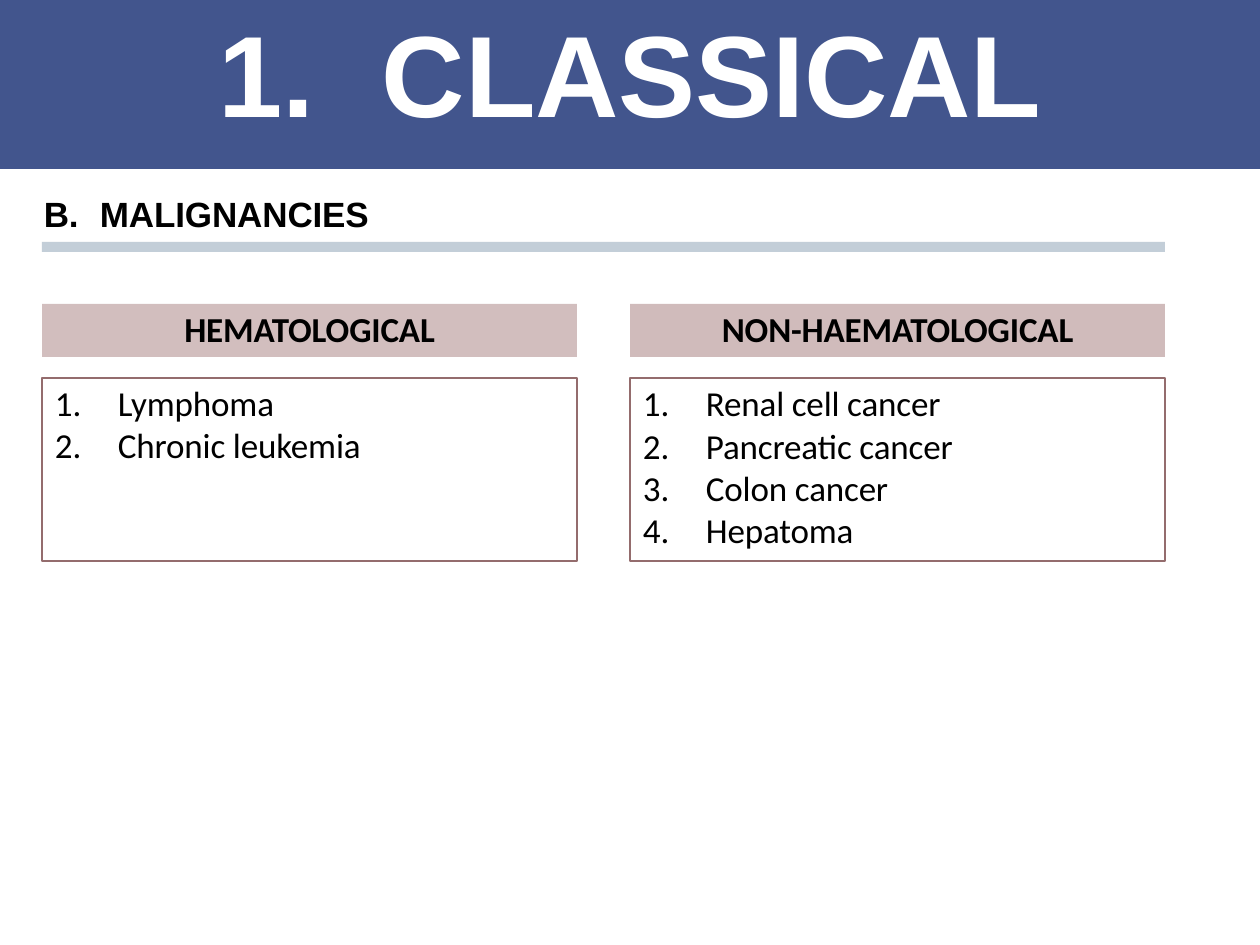
from dataclasses import dataclass

from lxml.etree import SubElement
from pptx import Presentation
from pptx.dml.color import RGBColor
from pptx.enum.shapes import MSO_SHAPE as Preset
from pptx.enum.text import MSO_ANCHOR as Anchor, PP_ALIGN as Align
from pptx.oxml.ns import qn
from pptx.util import Emu, Pt

PX = 914400 / 126


def emu(px):
    return Emu(round(px * PX))


@dataclass(frozen=True)
class Theme:
    banner: str = "42558D"
    rule: str = "7D96AC"
    heading: str = "A37879"
    outline: str = "946C6D"
    ink: str = "000000"
    paper: str = "FFFFFF"
    display_font: str = "Arial"
    body_font: str = "Calibri"
    title_size: int = 66
    text_size: int = 20


class Board:
    def __init__(self, slide, theme):
        self.slide = slide
        self.theme = theme

    def box(self, left, top, width, height, fill=None, opacity=100, outline=None):
        box = self.slide.shapes.add_shape(
            Preset.RECTANGLE, emu(left), emu(top), emu(width), emu(height))
        box.shadow.inherit = False
        if fill:
            box.fill.solid()
            box.fill.fore_color.rgb = RGBColor.from_string(fill)
            if opacity < 100:
                color = box.fill._xPr.find(".//" + qn("a:srgbClr"))
                SubElement(color, qn("a:alpha"), val=str(opacity * 1000))
        else:
            box.fill.background()
        if outline:
            box.line.color.rgb = RGBColor.from_string(outline)
            box.line.width = Pt(0.72)
        else:
            box.line.fill.background()
        return box

    def frame(self, shape, inset):
        frame = shape.text_frame
        frame.word_wrap = True
        frame.vertical_anchor = Anchor.TOP
        frame.margin_left = frame.margin_right = frame.margin_bottom = 0
        frame.margin_top = emu(inset)
        return frame

    def text_area(self, left, top, width, height):
        area = self.slide.shapes.add_textbox(
            emu(left), emu(top), emu(width), emu(height))
        return self.frame(area, inset=1)

    def run(self, paragraph, text, size, font, color, bold=False, spacing=-10):
        run = paragraph.add_run()
        run.text = text
        run.font.size = Pt(size)
        run.font.name = font
        run.font.bold = bold
        run.font.color.rgb = RGBColor.from_string(color)
        run.font._element.set("spc", str(spacing))

    def tab_stop(self, paragraph, px):
        stops = SubElement(paragraph._p.get_or_add_pPr(), qn("a:tabLst"))
        SubElement(stops, qn("a:tab"), pos=str(emu(px)), algn="l")

    def labelled(self, left, top, width, height, label, text, size, color, tab):
        line = self.text_area(left, top, width, height).paragraphs[0]
        line.space_before = Pt(1)
        line._p.get_or_add_pPr().set("marL", str(emu(1)))
        self.tab_stop(line, tab)
        font = self.theme.display_font
        self.run(line, label + "\t", size, font, color, bold=True, spacing=-20)
        self.run(line, text, size, font, color, bold=True)

    def heading(self, left, top, width, height, text, opacity):
        band = self.box(left, top, width, height, self.theme.heading, opacity)
        line = self.frame(band, inset=4).paragraphs[0]
        line.alignment = Align.CENTER
        line.space_before = Pt(2.4)
        self.run(line, text, self.theme.text_size, self.theme.body_font,
                 self.theme.ink, bold=True)

    def numbered(self, left, top, width, height, items, indent=63):
        frame = self.text_area(left, top, width, height)
        for index, item in enumerate(items):
            line = frame.add_paragraph() if index else frame.paragraphs[0]
            line.space_before = Pt(0 if index else 1.1)
            props = line._p.get_or_add_pPr()
            props.set("marL", str(emu(indent)))
            props.set("indent", str(-emu(indent)))
            SubElement(props, qn("a:buAutoNum"), type="arabicPeriod")
            self.tab_stop(line, indent)
            self.run(line, item, self.theme.text_size, self.theme.body_font,
                     self.theme.ink)


def main():
    deck = Presentation()
    deck.slide_width, deck.slide_height = emu(1260), emu(945)
    theme = Theme()
    board = Board(deck.slides.add_slide(deck.slide_layouts[6]), theme)

    # Title banner
    board.box(0, 0, 1260, 169, theme.banner)
    board.labelled(218, 1, 830, 142, "1.", "CLASSICAL",
                   theme.title_size, theme.paper, tab=163)

    # Section title and rule
    margin, column, gap = 42, 535, 53
    board.box(margin, 242, 2 * column + gap, 10, theme.rule, 46)
    board.labelled(margin + 1, 192, 340, 45, "B.", "MALIGNANCIES",
                   theme.text_size, theme.ink, tab=56)

    # Two groups of malignancies
    groups = [
        ("HEMATOLOGICAL", 48, ["Lymphoma", "Chronic leukemia"]),
        ("NON-HAEMATOLOGICAL", 50, ["Renal cell cancer", "Pancreatic cancer",
                                    "Colon cancer", "Hepatoma"]),
    ]
    for index, (group, opacity, cancers) in enumerate(groups):
        left = margin + index * (column + gap)
        board.heading(left, 304, column, 53, group, opacity)
        board.box(left, 378, column, 183, outline=theme.outline)
        board.numbered(left + 13, 381, 315, 4 + 42 * len(cancers), cancers)

    deck.save("out.pptx")


if __name__ == "__main__":
    main()
